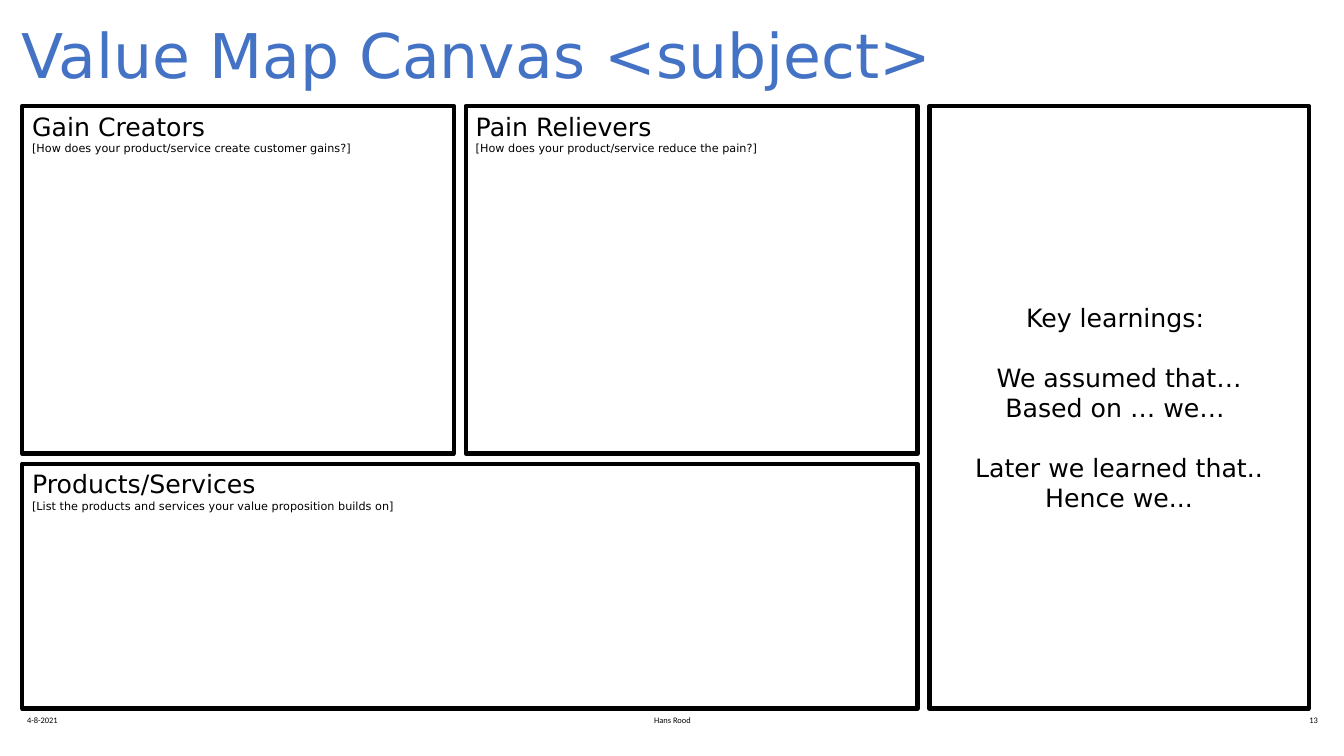
from dataclasses import dataclass

from pptx import Presentation
from pptx.dml.color import RGBColor
from pptx.enum.shapes import MSO_SHAPE
from pptx.enum.text import MSO_ANCHOR, PP_ALIGN
from pptx.util import Inches, Pt

RECT = MSO_SHAPE.RECTANGLE
TOP, MIDDLE = MSO_ANCHOR.TOP, MSO_ANCHOR.MIDDLE
LEFT, CENTER, RIGHT = PP_ALIGN.LEFT, PP_ALIGN.CENTER, PP_ALIGN.RIGHT


@dataclass(frozen=True)
class Theme:
    ink: RGBColor = RGBColor(0, 0, 0)
    paper: RGBColor = RGBColor(255, 255, 255)
    accent: RGBColor = RGBColor(0x44, 0x72, 0xC4)
    font: str = "DejaVu Sans"
    footer_font: str = "Calibri"
    title: int = 44
    heading: int = 18
    hint: int = 8
    footer: int = 6
    border: int = 3


THEME = Theme()
SLIDE_W, SLIDE_H = 13.33, 7.5
LEFT_EDGE, TOP_EDGE = 0.22, 1.05
COLS, COL_GAP = (4.28, 4.48, 3.76), 0.12
ROWS, ROW_GAP = (3.45, 2.43), 0.1


def span(start, sizes, gap, first, count):
    offset = start + sum(sizes[:first]) + gap * first
    return offset, sum(sizes[first:first + count]) + gap * (count - 1)


def cell(col, row, cols=1, rows=1):
    x, w = span(LEFT_EDGE, COLS, COL_GAP, col, cols)
    y, h = span(TOP_EDGE, ROWS, ROW_GAP, row, rows)
    return x, y, w, h


def write(tf, lines, align=LEFT, anchor=TOP, font=THEME.font, color=THEME.ink):
    tf.word_wrap = True
    tf.vertical_anchor = anchor
    for i, (text, size, before) in enumerate(lines):
        p = tf.add_paragraph() if i else tf.paragraphs[0]
        p.text = text
        p.alignment = align
        p.space_before = Pt(before)
        p.font.name = font
        p.font.size = Pt(size)
        p.font.color.rgb = color


def add_panel(s, box, lines, align=LEFT, anchor=TOP):
    sp = s.shapes.add_shape(RECT, *map(Inches, box))
    sp.shadow.inherit = False
    sp.fill.solid()
    sp.fill.fore_color.rgb = THEME.paper
    sp.line.color.rgb = THEME.ink
    sp.line.width = Pt(THEME.border)
    write(sp.text_frame, lines, align, anchor)


def add_title(s, box, text):
    tf = s.shapes.add_textbox(*map(Inches, box)).text_frame
    tf.margin_left = tf.margin_right = tf.margin_top = tf.margin_bottom = Inches(0.13)
    write(tf, [(text, THEME.title, 0)], anchor=MIDDLE, color=THEME.accent)
    tf.paragraphs[0].line_spacing = 0.9


def add_canvas(s):
    for box, heading, hint in (
        (cell(0, 0), "Gain Creators",
         "[How does your product/service create customer gains?]"),
        (cell(1, 0), "Pain Relievers",
         "[How does your product/service reduce the pain?]"),
        (cell(0, 1, cols=2), "Products/Services",
         "[List the products and services your value proposition builds on]"),
    ):
        add_panel(s, box, [(heading, THEME.heading, 0), (hint, THEME.hint, 0)])


def add_learnings(s, box):
    blocks = (
        ("Key learnings: ",),
        ("We assumed that…", "Based on … we… "),
        ("Later we learned that..", "Hence we..."),
    )
    block_gap = THEME.heading * 1.18
    lines = [(text, THEME.heading, block_gap if b and not i else 0)
             for b, block in enumerate(blocks) for i, text in enumerate(block)]
    add_panel(s, box, lines, CENTER, MIDDLE)


def add_footer(s, box):
    x, y, w, h = box
    side, middle = 3, 4.5
    for left, width, text, align in (
        (x, side, "4-8-2021", LEFT),
        (x + (w - middle) / 2, middle, "Hans Rood", CENTER),
        (x + w - side, side, "13", RIGHT),
    ):
        tb = s.shapes.add_textbox(*map(Inches, (left, y, width, h)))
        write(tb.text_frame, [(text, THEME.footer, 0)], align,
              font=THEME.footer_font)


def main():
    prs = Presentation()
    prs.slide_width, prs.slide_height = Inches(SLIDE_W), Inches(SLIDE_H)
    s = prs.slides.add_slide(prs.slide_layouts[6])
    add_title(s, (0.08, 0.16, 11.09, 0.84), "Value Map Canvas <subject>")
    add_canvas(s)
    add_learnings(s, cell(2, 0, rows=2))
    add_footer(s, (0.17, 7.05, 13, 0.23))
    prs.save("out.pptx")


if __name__ == "__main__":
    main()
